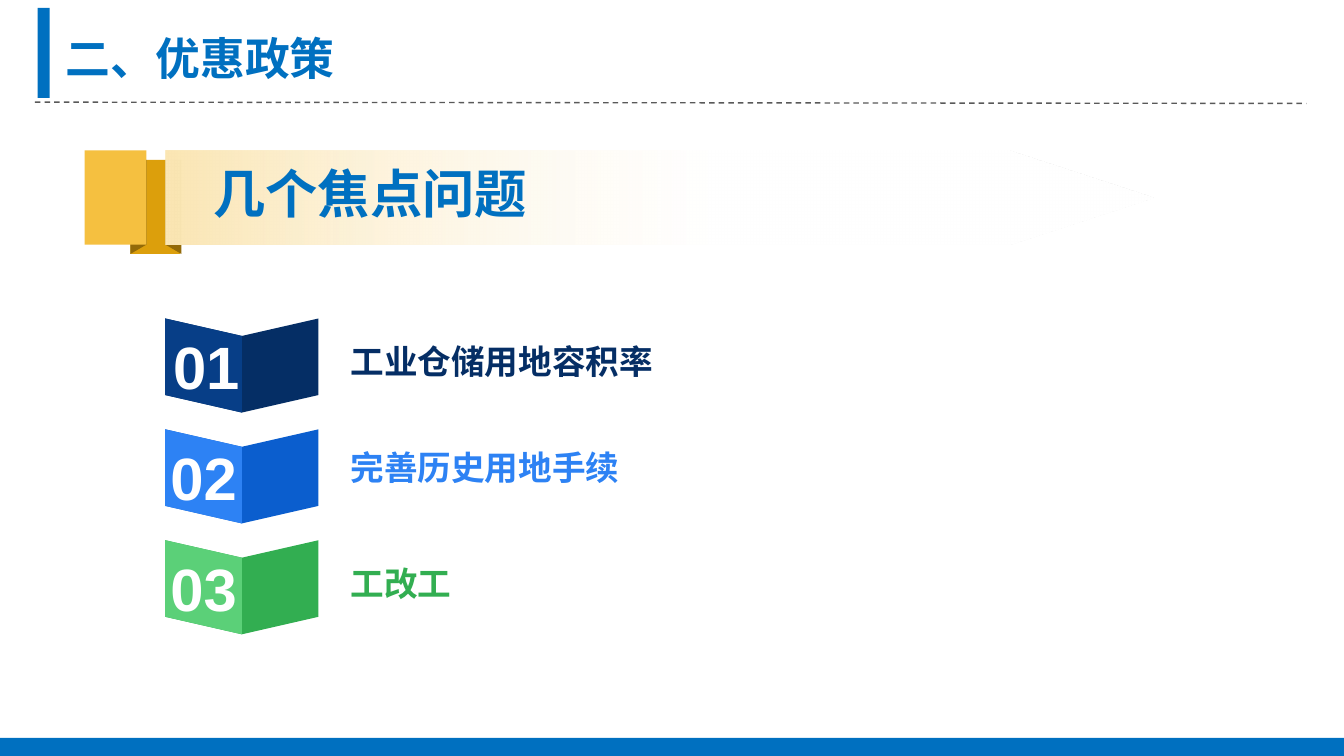
from dataclasses import dataclass

from lxml import etree
from pptx import Presentation
from pptx.dml.color import RGBColor
from pptx.enum.dml import MSO_LINE
from pptx.enum.shapes import MSO_CONNECTOR, MSO_SHAPE
from pptx.enum.text import MSO_ANCHOR, MSO_AUTO_SIZE, PP_ALIGN
from pptx.oxml.ns import qn
from pptx.util import Inches, Pt

RECT, STRAIGHT = MSO_SHAPE.RECTANGLE, MSO_CONNECTOR.STRAIGHT
DASH = MSO_LINE.DASH
TOP, MIDDLE = MSO_ANCHOR.TOP, MSO_ANCHOR.MIDDLE
LEFT, CENTER = PP_ALIGN.LEFT, PP_ALIGN.CENTER
GROW = MSO_AUTO_SIZE.SHAPE_TO_FIT_TEXT

CJK, LATIN = "Noto Sans CJK SC", "Arial"
COLORS = {
    "white": "FFFFFF", "blue": "0070C0", "rule": "595959",
    "gold": "F5C040", "gold_mid": "DC9F0C", "gold_dark": "936A08",
    "cream": "FBE6B3",
    "navy": "052E65", "navy_face": "073E87",
    "azure": "0B5ECE", "azure_face": "2D82F4",
    "green": "32AE51", "green_face": "5BD078",
}


@dataclass
class Topic:
    number: str
    label: str
    back: str
    face: str
    label_color: str
    label_top: float
    number_left: float


TOPICS = [
    Topic("01", "工业仓储用地容积率", "navy", "navy_face", "navy", 2.49, 1.05),
    Topic("02", "完善历史用地手续", "azure", "azure_face", "azure_face", 3.28, 1.03),
    Topic("03", "工改工", "green", "green_face", "green", 4.14, 1.03),
]
FIRST_TOP, LAST_TOP = 2.37, 4.02
TOPIC_PITCH = (LAST_TOP - FIRST_TOP) / (len(TOPICS) - 1)


def rgb(name: str) -> RGBColor:
    return RGBColor.from_string(COLORS[name])


def finish(sp, color: str):
    """Plain fill, no outline, no shadow."""
    sp.fill.solid()
    sp.fill.fore_color.rgb = rgb(color)
    sp.line.fill.background()
    sp.shadow.inherit = False
    return sp


def add_rect(shapes, x: float, y: float, w: float, h: float, color: str):
    box = (Inches(v) for v in (x, y, w, h))
    return finish(shapes.add_shape(RECT, *box), color)


def add_polygon(shapes, points: list, color: str):
    start, *rest = [(Inches(x), Inches(y)) for x, y in points]
    builder = shapes.build_freeform(*start)
    builder.add_line_segments(rest, close=True)
    return finish(builder.convert_to_shape(), color)


def write(sp, text: str, size: float, color: str, font: str = CJK,
          align=LEFT, anchor=TOP):
    tf = sp.text_frame
    tf.word_wrap = True
    tf.auto_size = GROW
    tf.vertical_anchor = anchor
    p = tf.paragraphs[0]
    p.alignment = align
    r = p.add_run()
    r.text = text
    r.font.size = Pt(size)
    r.font.bold = True
    r.font.color.rgb = rgb(color)
    r.font.name = font
    etree.SubElement(r.font._element, qn("a:ea"), typeface=font)
    return tf


def add_text(shapes, x: float, y: float, w: float, h: float, *args, **kwargs):
    box = (Inches(v) for v in (x, y, w, h))
    return write(shapes.add_textbox(*box), *args, **kwargs)


def add_banner(shapes, text: str):
    # Folded gold ribbon
    top, bottom, fold = 1.12, 1.82, 1.89
    add_rect(shapes, 0.97, 1.19, 0.37, 0.7, "gold_mid")
    for outer, inner in ((0.97, 1.09), (1.35, 1.23)):
        add_polygon(shapes, [(outer, fold), (inner, bottom), (inner, 1.19),
                             (outer, 1.19)], "gold_dark")
    add_rect(shapes, 0.63, top, 0.46, 0.7, "gold")

    # Fading pointed strip
    strip = add_polygon(shapes, [(1.23, top), (7.5, top), (8.58, 1.47),
                                 (7.5, bottom), (1.23, bottom)], "cream")
    strip.fill.gradient()
    strip.fill.gradient_angle = 0
    stops = strip.fill.gradient_stops
    for stop, position, color in zip(stops, (0, 0.56), ("cream", "white")):
        stop.position = position
        stop.color.rgb = rgb(color)
    end_color = strip._element.spPr.findall(".//" + qn("a:srgbClr"))[-1]
    etree.SubElement(end_color, qn("a:alpha"), val="32000")

    add_text(shapes, 1.49, 1.15, 7.29, 0.57, text, 28, "blue")


def add_topic(shapes, topic: Topic, y: float):
    left, mid, right = 1.23, 1.8, 2.37
    side, dip = 0.57, 0.13
    add_text(shapes, 2.51, topic.label_top, 6.44, 0.4, topic.label, 18,
             topic.label_color)
    face = [(left, y), (left, y + side), (mid, y + side + dip), (mid, y + dip)]
    back = face[:3] + [(right, y + side), (right, y), (mid, y + dip)]
    add_polygon(shapes, back, topic.back)
    add_polygon(shapes, face, topic.face)
    tf = add_text(shapes, topic.number_left, y + 0.08, 0.97, 0.54,
                  topic.number, 32, "white", LATIN, CENTER, MIDDLE)
    tf.margin_left = tf.margin_right = tf.margin_top = tf.margin_bottom = 0
    tf.paragraphs[0].space_after = Pt(12)


def main():
    # Widescreen 16:9 page
    prs = Presentation()
    prs.slide_width = Inches(10)
    prs.slide_height = Inches(10 * 9 / 16)
    s = prs.slides.add_slide(prs.slide_layouts[5])

    # Title
    title = s.shapes.title
    title.left, title.top = Inches(0.39), Inches(0.18)
    title.width, title.height = Inches(6.38), Inches(0.5)
    write(title, "二、优惠政策", 24, "blue")

    # Page frame: title bar, dashed rule, footer band
    add_rect(s.shapes, 0.28, 0.06, 0.09, 0.67, "blue")
    rule = s.shapes.add_connector(STRAIGHT, Inches(0.26), Inches(0.76),
                                  Inches(9.72), Inches(0.77))
    rule.line.color.rgb = rgb("rule")
    rule.line.width = Pt(0.75)
    rule.line.dash_style = DASH
    etree.SubElement(rule._element.spPr, qn("a:effectLst"))
    add_rect(s.shapes, 0, 5.49, 10, 0.14, "blue")

    # Content
    add_banner(s.shapes.add_group_shape().shapes, "几个焦点问题")
    for i, topic in enumerate(TOPICS):
        group = s.shapes.add_group_shape()
        add_topic(group.shapes, topic, FIRST_TOP + i * TOPIC_PITCH)

    prs.save("out.pptx")


if __name__ == "__main__":
    main()
